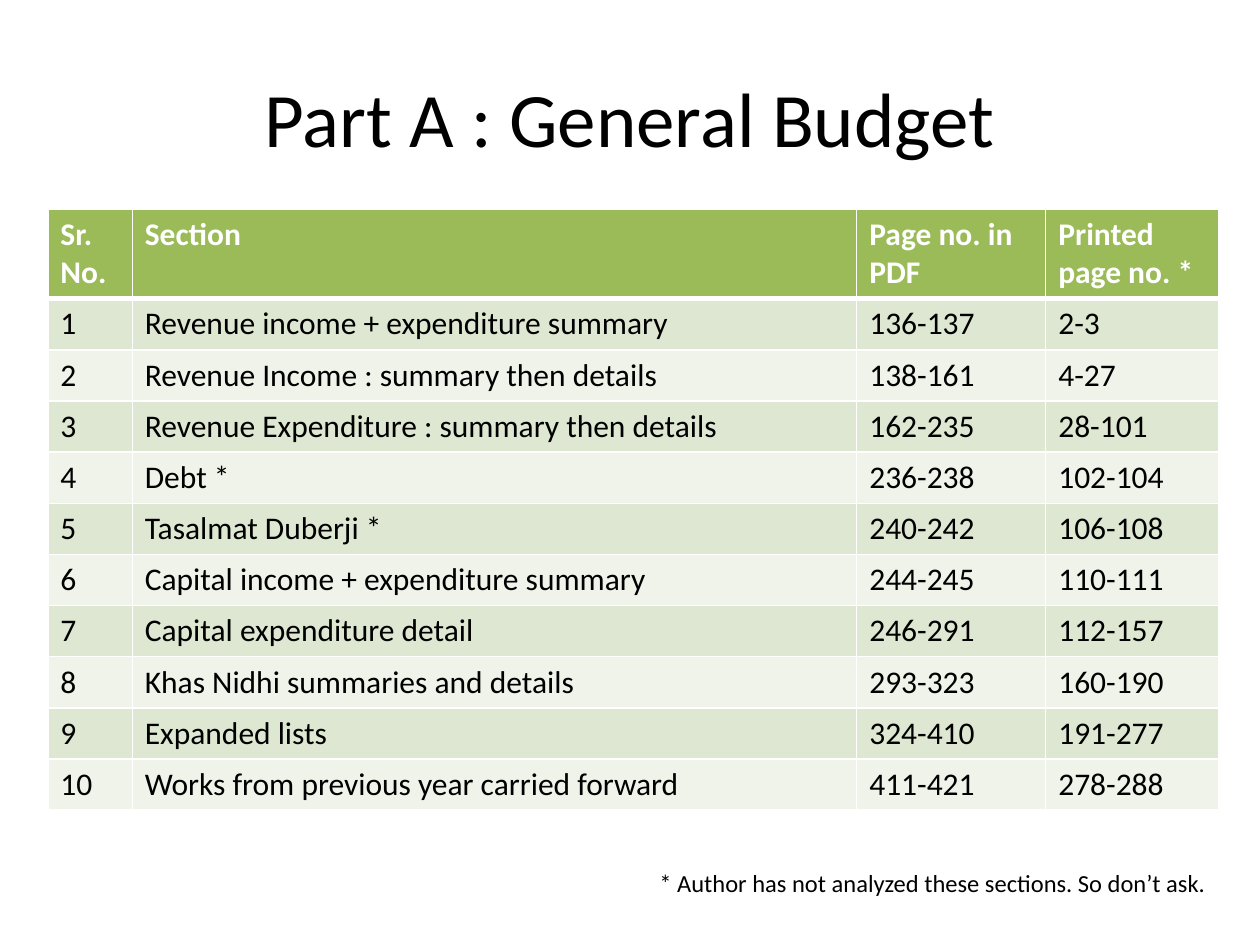
from lxml.etree import SubElement
from pptx import Presentation
from pptx.dml.color import RGBColor
from pptx.enum.text import MSO_ANCHOR as Anchor, PP_ALIGN as Align
from pptx.oxml.ns import qn
from pptx.util import Inches, Pt

FONT = "Calibri"
BLACK, WHITE, GREEN = "000000", "FFFFFF", "9BBB59"
BANDS = ["DEE7D1", "EFF3EA"]
COLUMN_WIDTHS = [0.67, 5.75, 1.5, 1.37]
HEADER_HEIGHT = 0.7
HEADINGS = ["Sr. No.", "Section", "Page no. in PDF", "Printed page no. *"]
SECTIONS = [
    ("Revenue income + expenditure summary", "136-137", "2-3"),
    ("Revenue Income : summary then details", "138-161", "4-27"),
    ("Revenue Expenditure : summary then details", "162-235", "28-101"),
    ("Debt *", "236-238", "102-104"),
    ("Tasalmat Duberji *", "240-242", "106-108"),
    ("Capital income + expenditure summary", "244-245", "110-111"),
    ("Capital expenditure detail", "246-291", "112-157"),
    ("Khas Nidhi summaries and details", "293-323", "160-190"),
    ("Expanded lists", "324-410", "191-277"),
    ("Works from previous year carried forward", "411-421", "278-288"),
]


def color(hex_value):
    return RGBColor.from_string(hex_value)


def write(frame, text, size, hex_value, bold=False, align=Align.LEFT):
    paragraph = frame.paragraphs[0]
    paragraph.alignment = align
    run = paragraph.add_run()
    run.text = text
    run.font.name = FONT
    run.font.size = Pt(size)
    run.font.bold = bold
    run.font.color.rgb = color(hex_value)


def add_borders(cell, bottom_width):
    properties = cell._tc.get_or_add_tcPr()
    widths = {"a:lnL": 1, "a:lnR": 1, "a:lnT": 1, "a:lnB": bottom_width}
    for side, width in widths.items():
        border = SubElement(properties, qn(side), w=str(Pt(width)))
        fill = SubElement(border, qn("a:solidFill"))
        SubElement(fill, qn("a:srgbClr"), val=WHITE)


def place_title(slide, left, top, width, height):
    title = slide.shapes.title
    title.left, title.top = Inches(left), Inches(top)
    title.width, title.height = Inches(width), Inches(height)
    title.text_frame.vertical_anchor = Anchor.MIDDLE
    write(title.text_frame, "Part A : General Budget", 44, BLACK, align=Align.CENTER)


def add_sections_table(slide, left, top, width, height):
    rows = [HEADINGS] + [(str(n), *section) for n, section in enumerate(SECTIONS, 1)]
    table = slide.shapes.add_table(
        len(rows), len(HEADINGS),
        Inches(left), Inches(top), Inches(width), Inches(height),
    ).table
    for column, column_width in zip(table.columns, COLUMN_WIDTHS):
        column.width = Inches(column_width)
    body_height = (height - HEADER_HEIGHT) / len(SECTIONS)
    for r, values in enumerate(rows):
        header = r == 0
        table.rows[r].height = Inches(HEADER_HEIGHT if header else body_height)
        for c, value in enumerate(values):
            cell = table.cell(r, c)
            add_borders(cell, 3 if header else 1)
            cell.fill.solid()
            cell.fill.fore_color.rgb = color(GREEN if header else BANDS[(r - 1) % 2])
            write(cell.text_frame, value, 18, WHITE if header else BLACK, bold=header)


def add_footnote(slide, left, top, width, height):
    footnote = slide.shapes.add_textbox(
        Inches(left), Inches(top), Inches(width), Inches(height)
    ).text_frame
    footnote.word_wrap = True
    write(footnote, "* Author has not analyzed these sections. So don’t ask.",
          14, BLACK, align=Align.RIGHT)


def main():
    deck = Presentation()
    deck.slide_width, deck.slide_height = Inches(10), Inches(7.5)
    slide = deck.slides.add_slide(deck.slide_layouts[5])
    place_title(slide, 0.5, 0.3, 9, 1.25)
    add_sections_table(slide, 0.38, 1.66, sum(COLUMN_WIDTHS), 4.76)
    add_footnote(slide, 0.17, 6.84, 9.5, 0.34)
    deck.save("out.pptx")


if __name__ == "__main__":
    main()
